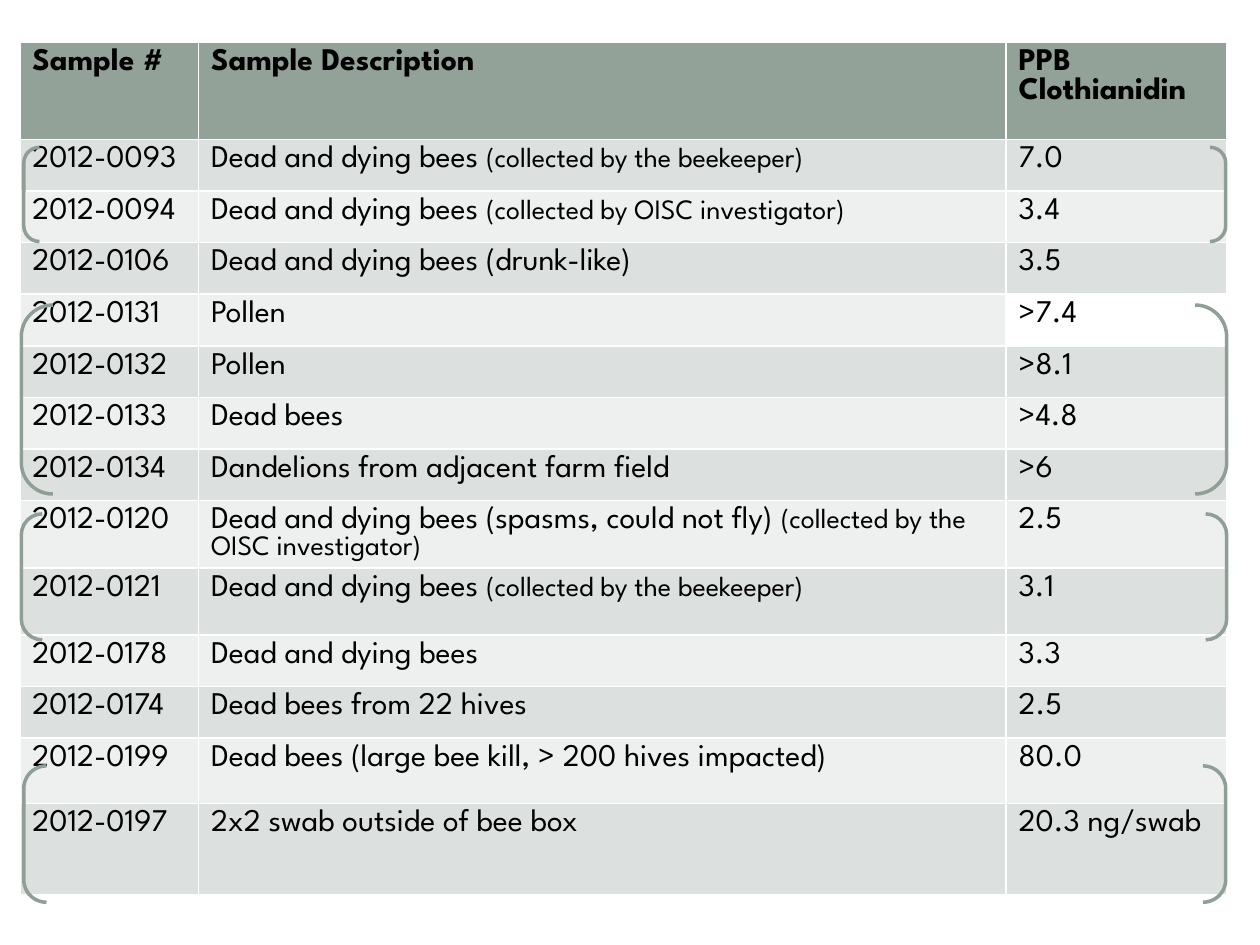
"""Build a slide with a table of clothianidin levels in bee samples."""
from pptx import Presentation
from pptx.dml.color import RGBColor as Rgb
from pptx.enum.shapes import MSO_SHAPE as Shape
from pptx.util import Cm, Pt


def color(code):
    return Rgb.from_string(code)


deck = Presentation()
deck.slide_width, deck.slide_height = Cm(25.4), Cm(19.05)
slide = deck.slides.add_slide(deck.slide_layouts[6])

rows = [
    ("Sample #", "Sample Description", "", "PPB Clothianidin", 1.96),
    ("2012-0093", "Dead and dying bees ", "(collected by the beekeeper)", "7.0", 1.04),
    ("2012-0094", "Dead and dying bees ", "(collected by OISC investigator)", "3.4", 1.04),
    ("2012-0106", "Dead and dying bees (drunk-like)", "", "3.5", 1.04),
    ("2012-0131", "Pollen", "", ">7.4", 1.04),
    ("2012-0132", "Pollen", "", ">8.1", 1.04),
    ("2012-0133", "Dead bees", "", ">4.8", 1.04),
    ("2012-0134", "Dandelions from adjacent farm field", "", ">6", 1.04),
    ("2012-0120", "Dead and dying bees (spasms, could not fly) ",
     "(collected by the OISC investigator)", "2.5", 1.14),
    ("2012-0121", "Dead and dying bees ", "(collected by the beekeeper)", "3.1", 1.35),
    ("2012-0178", "Dead and dying bees", "", "3.3", 1.04),
    ("2012-0174", "Dead bees from 22 hives", "", "2.5", 1.04),
    ("2012-0199", "Dead bees (large bee kill, > 200 hives impacted)", "", "80.0", 1.32),
    ("2012-0197", "2x2 swab outside of bee box", "", "20.3 ng/swab", 1.83),
]
frame = slide.shapes.add_table(len(rows), 3, Cm(0.4), Cm(0.85), Cm(24.33), Cm(17))
table = frame.table
for col, width in zip(table.columns, (3.6, 16.28, 4.45)):
    col.width = Cm(width)

for i, (sample, text, note, level, height) in enumerate(rows):
    table.rows[i].height = Cm(height)
    band = "DCE0DE" if i % 2 else "EEF0EF"
    for j, words in enumerate((sample, text, level)):
        cell = table.cell(i, j)
        if level == ">7.4" and j == 2:
            cell.fill.background()
        else:
            cell.fill.solid()
            cell.fill.fore_color.rgb = color(band if i else "93A299")
        para = cell.text_frame.paragraphs[0]
        para.font.name = "League Spartan"
        para.font.color.rgb = color("000000")
        para.font.bold = i == 0
        para.font.size = Pt(18)
        para.add_run().text = words
        if note and j == 1:
            run = para.add_run()
            run.text = note
            run.font.size = Pt(16)

for left, top, width, height in (
    (0.48, 2.97, 24.23, 1.9),
    (0.43, 6.15, 24.3, 3.81),
    (0.43, 10.36, 24.3, 2.54),
    (0.48, 15.44, 24.23, 2.75),
):
    pair = slide.shapes.add_shape(
        Shape.DOUBLE_BRACKET, Cm(left), Cm(top), Cm(width), Cm(height))
    pair.shadow.inherit = False
    pair.fill.background()
    pair.line.color.rgb = color("8F9F96")
    pair.line.width = Pt(2)

deck.save("out.pptx")
